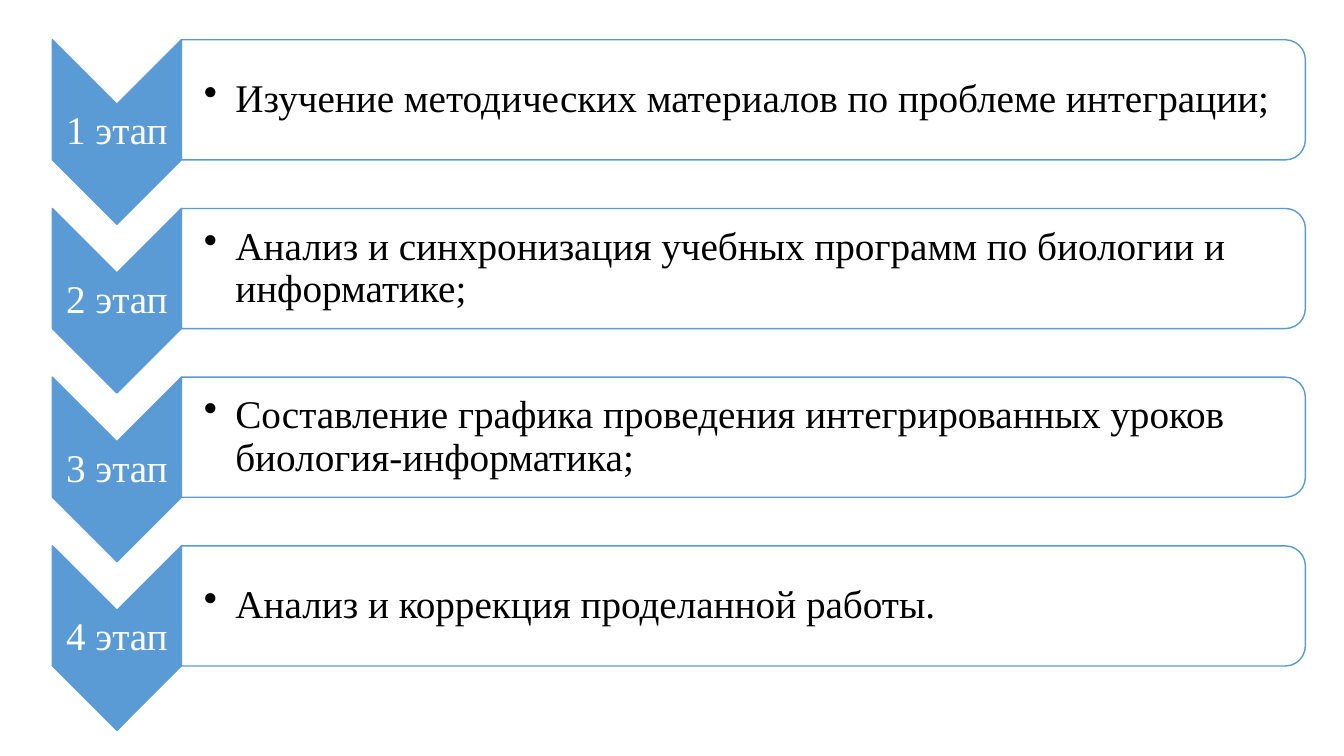
import pptx
import pptx.util
import pptx.dml.color
import pptx.enum.shapes
import pptx.enum.text
import pptx.oxml.ns
import lxml.etree

Pt = pptx.util.Pt
qn = pptx.oxml.ns.qn
MSO_SHAPE = pptx.enum.shapes.MSO_SHAPE
PP_ALIGN = pptx.enum.text.PP_ALIGN

COLORS = {"accent": "5B9BD5", "panel": "FFFFFF", "label": "FFFFFF", "body": "000000"}
FONT = "Times New Roman"
STAGES = [
    ("1 этап", "Изучение методических материалов по проблеме интеграции;"),
    ("2 этап", "Анализ и синхронизация учебных программ по биологии и информатике;"),
    ("3 этап", "Составление графика проведения интегрированных уроков биология-информатика;"),
    ("4 этап", "Анализ и коррекция проделанной работы."),
]
LEFT, TOP, WIDTH, STEP = 37.4, 28.4, 895, 120.5
CHEVRON_WIDTH, CHEVRON_HEIGHT, PANEL_HEIGHT = 92.2, 131.8, 85.8


def rgb(name):
    return pptx.dml.color.RGBColor.from_string(COLORS[name])


def add_turned_shape(slide, preset, left, top, width, height, fill):
    center_x, center_y = left + width / 2, top + height / 2
    shape = slide.shapes.add_shape(
        preset, Pt(center_x - height / 2), Pt(center_y - width / 2), Pt(height), Pt(width))
    shape.rotation = 90
    shape.shadow.inherit = False
    shape.fill.solid()
    shape.fill.fore_color.rgb = rgb(fill)
    shape.line.color.rgb = rgb("accent")
    shape.line.width = Pt(1)
    return shape


def add_words(slide, words, left, top, width, height, color, inset, bulleted=False):
    box = slide.shapes.add_textbox(Pt(left), Pt(top), Pt(width), Pt(height))
    frame = box.text_frame
    frame.word_wrap = True
    frame.vertical_anchor = pptx.enum.text.MSO_ANCHOR.MIDDLE
    frame.margin_left = Pt(inset)
    frame.margin_right = frame.margin_top = frame.margin_bottom = Pt(1.4)
    paragraph = frame.paragraphs[0]
    paragraph.text = words
    paragraph.line_spacing = 0.9
    if bulleted:
        paragraph.level = 1
        properties = paragraph._p.get_or_add_pPr()
        properties.set("marL", str(Pt(22.5)))
        properties.set("indent", str(-Pt(22.5)))
        lxml.etree.SubElement(properties, qn("a:buChar")).set("char", "•")
    else:
        paragraph.alignment = PP_ALIGN.CENTER
    paragraph.font.name = FONT
    paragraph.font.size = Pt(28)
    paragraph.font.color.rgb = rgb(color)


def add_stage(slide, label, task, left, top, width):
    add_turned_shape(slide, MSO_SHAPE.CHEVRON, left, top,
                     CHEVRON_WIDTH, CHEVRON_HEIGHT, "accent")
    add_words(slide, label, left, top + CHEVRON_WIDTH / 2, CHEVRON_WIDTH,
              CHEVRON_HEIGHT - CHEVRON_WIDTH, "label", 1.4)
    panel_left, panel_width = left + CHEVRON_WIDTH, width - CHEVRON_WIDTH
    panel = add_turned_shape(slide, MSO_SHAPE.ROUND_2_SAME_RECTANGLE, panel_left, top,
                             panel_width, PANEL_HEIGHT, "panel")
    panel_color = panel._element.spPr.find(qn("a:solidFill"))[0]
    lxml.etree.SubElement(panel_color, qn("a:alpha")).set("val", "90000")
    add_words(slide, task, panel_left, top + 4.2, panel_width - 4.2,
              PANEL_HEIGHT - 8.4, "body", 16, bulleted=True)


def main():
    deck = pptx.Presentation()
    deck.slide_width, deck.slide_height = Pt(960), Pt(540)
    slide = deck.slides.add_slide(deck.slide_layouts[6])
    for index, (label, task) in enumerate(STAGES):
        add_stage(slide, label, task, LEFT, TOP + index * STEP, WIDTH)
    deck.save("out.pptx")


if __name__ == "__main__":
    main()
